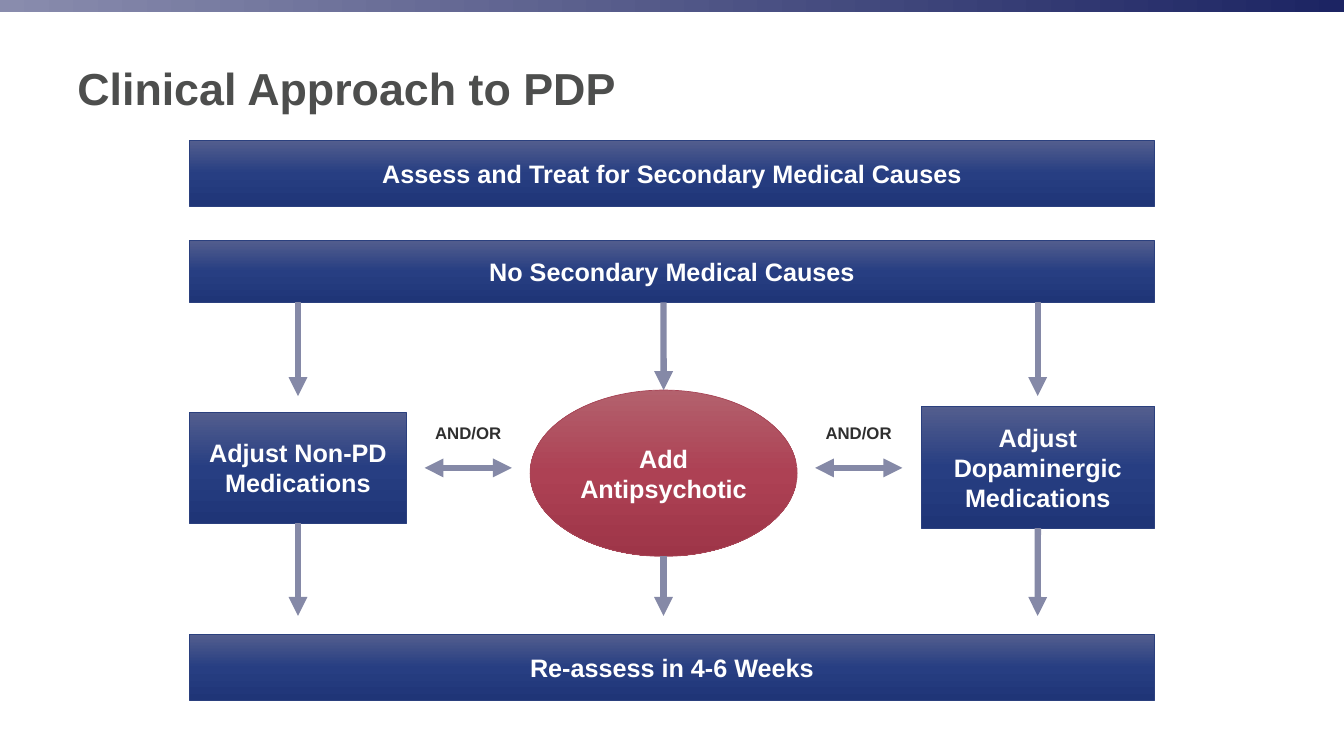
from lxml import etree
from pptx import Presentation
from pptx.dml.color import RGBColor
from pptx.enum.shapes import MSO_CONNECTOR, MSO_SHAPE
from pptx.enum.text import MSO_ANCHOR, PP_ALIGN
from pptx.oxml import parse_xml
from pptx.oxml.ns import qn
from pptx.util import Cm, Pt

COLORS = {
    "title": "4D4E4D", "label": "2F2F2F", "white": "FFFFFF", "arrow": "8589A7",
    "box_line": "2B407E", "oval_line": "A84657",
}
GRADIENTS = {
    "box": ("535E8E", "273E82", "1F3577"),
    "oval": ("B3616D", "AD4154", "9E3548"),
    "band": ("898CAD", "1C2463"),
}
NAMESPACE = "http://schemas.openxmlformats.org/drawingml/2006/main"

presentation = Presentation()
presentation.slide_width = Cm(33.87)
presentation.slide_height = Cm(19.05)
slide = presentation.slides.add_slide(presentation.slide_layouts[6])


def write_text(shape, text, size, color, alignment=PP_ALIGN.CENTER):
    shape.text_frame.text = text
    paragraph = shape.text_frame.paragraphs[0]
    paragraph.alignment = alignment
    font = paragraph.runs[0].font
    font.name = "Arial"
    font.size = Pt(size)
    font.bold = True
    font.color.rgb = RGBColor.from_string(COLORS[color])


def add_gradient_shape(kind, left, top, width, height, gradient, angle=90):
    shape = slide.shapes.add_shape(kind, Cm(left), Cm(top), Cm(width), Cm(height))
    shape.shadow.inherit = False
    colors = GRADIENTS[gradient]
    stops = "".join(
        f'<a:gs pos="{100000 * index // (len(colors) - 1)}"><a:srgbClr val="{color}"/></a:gs>'
        for index, color in enumerate(colors)
    )
    fill = parse_xml(
        f'<a:gradFill xmlns:a="{NAMESPACE}" rotWithShape="1"><a:gsLst>{stops}</a:gsLst>'
        f'<a:lin ang="{angle * 60000}" scaled="0"/></a:gradFill>'
    )
    shape._element.spPr.find(qn("a:prstGeom")).addnext(fill)
    return shape


title = slide.shapes.add_textbox(Cm(1.7), Cm(0.56), Cm(29.85), Cm(3.3))
title.text_frame.word_wrap = True
title.text_frame.vertical_anchor = MSO_ANCHOR.MIDDLE
write_text(title, "Clinical Approach to PDP", 32, "title", PP_ALIGN.LEFT)

band = add_gradient_shape(MSO_SHAPE.RECTANGLE, 0, 0, 33.87, 0.3, "band", 0)
band.line.fill.background()

RECTANGLE, OVAL = MSO_SHAPE.RECTANGLE, MSO_SHAPE.OVAL
steps = [
    ("Assess and Treat for Secondary Medical Causes", RECTANGLE, 4.78, 3.53, 24.31, 1.68, "box"),
    ("No Secondary Medical Causes", RECTANGLE, 4.78, 6.05, 24.31, 1.57, "box"),
    ("Adjust Non-PD Medications", RECTANGLE, 4.78, 10.39, 5.46, 2.79, "box"),
    ("Add Antipsychotic", OVAL, 13.36, 9.83, 6.73, 4.19, "oval"),
    ("Adjust Dopaminergic Medications", RECTANGLE, 23.21, 10.24, 5.89, 3.07, "box"),
    ("Re-assess in 4-6 Weeks", RECTANGLE, 4.78, 15.98, 24.31, 1.68, "box"),
]
step_shapes = {}
for text, kind, left, top, width, height, style in steps:
    shape = add_gradient_shape(kind, left, top, width, height, style)
    shape.line.color.rgb = RGBColor.from_string(COLORS[style + "_line"])
    shape.line.width = Pt(0.5)
    shape.text_frame.vertical_anchor = MSO_ANCHOR.MIDDLE
    write_text(shape, text, 18, "white")
    step_shapes[text] = shape

left_box = step_shapes["Adjust Non-PD Medications"]
oval = step_shapes["Add Antipsychotic"]
right_box = step_shapes["Adjust Dopaminergic Medications"]

arrows = [
    (7.51, 7.62, 7.51, 9.98, None, None, False),
    (16.72, 7.62, 16.72, 9.83, None, oval, False),
    (26.15, 7.62, 26.15, 9.98, None, None, False),
    (7.51, 13.18, 7.51, 15.52, left_box, None, False),
    (16.72, 14.02, 16.72, 15.52, None, None, False),
    (26.15, 13.31, 26.15, 15.52, right_box, None, False),
]
for left in (10.7, 20.54):
    arrows.append((left, 11.79, left + 2.2, 11.79, None, None, True))
    label = slide.shapes.add_textbox(Cm(left), Cm(10.54), Cm(2.2), Cm(0.76))
    label.text_frame.word_wrap = False
    write_text(label, "AND/OR", 12, "label")

for start_x, start_y, end_x, end_y, source, target, two_way in arrows:
    arrow = slide.shapes.add_connector(
        MSO_CONNECTOR.STRAIGHT, Cm(start_x), Cm(start_y), Cm(end_x), Cm(end_y)
    )
    if source is not None:
        arrow.begin_connect(source, 2)
    if target is not None:
        arrow.end_connect(target, 0)
    arrow.line.color.rgb = RGBColor.from_string(COLORS["arrow"])
    arrow.line.width = Pt(4.5)
    properties = arrow._element.spPr
    line = properties.find(qn("a:ln"))
    for end in ("a:headEnd", "a:tailEnd") if two_way else ("a:tailEnd",):
        etree.SubElement(line, qn(end), type="triangle")
    etree.SubElement(properties, qn("a:effectLst"))

presentation.save("out.pptx")
